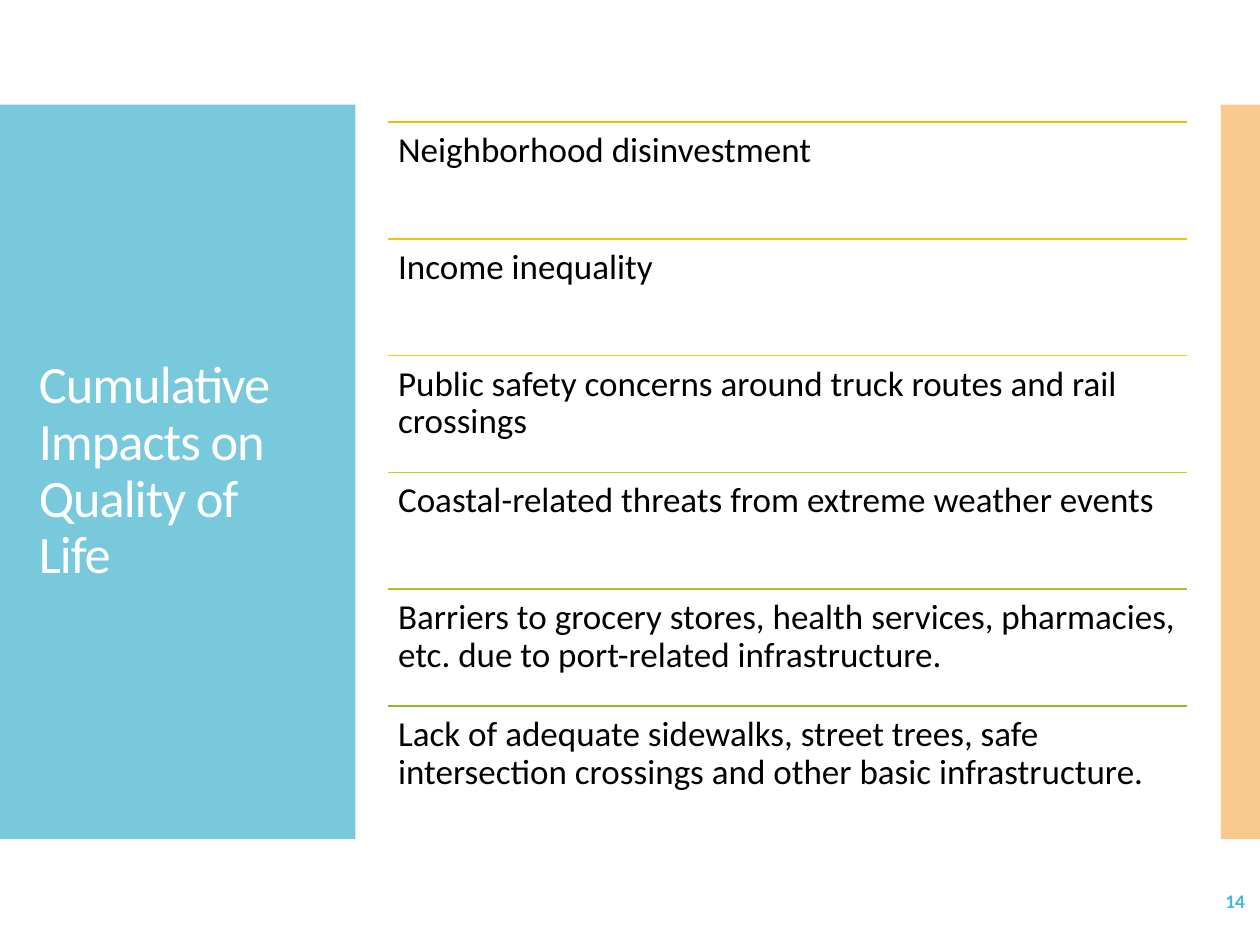
from dataclasses import dataclass

from lxml import etree
from pptx import Presentation
from pptx.dml.color import RGBColor
from pptx.enum.shapes import MSO_CONNECTOR, MSO_SHAPE
from pptx.enum.text import MSO_ANCHOR, PP_ALIGN
from pptx.oxml.ns import qn
from pptx.util import Inches, Pt

RECTANGLE = MSO_SHAPE.RECTANGLE
STRAIGHT = MSO_CONNECTOR.STRAIGHT
TOP, MIDDLE = MSO_ANCHOR.TOP, MSO_ANCHOR.MIDDLE
LEFT, RIGHT = PP_ALIGN.LEFT, PP_ALIGN.RIGHT


@dataclass(frozen=True)
class Theme:
    font: str = "Calibri"
    panel: str = "79C9DD"
    accent: str = "F79421"
    title: str = "FFFFFF"
    body: str = "000000"
    number: str = "40BAD2"
    title_size: float = 30
    body_size: float = 20
    number_size: float = 11
    rule_width: float = 0.85


THEME = Theme()

IMPACTS = [
    ("Neighborhood disinvestment", "FAB900"),
    ("Income inequality", "EDCA08"),
    ("Public safety concerns around truck routes and rail crossings", "E0D70F"),
    ("Coastal-related threats from extreme weather events", "C7D316"),
    ("Barriers to grocery stores, health services, pharmacies, etc. "
     "due to port-related infrastructure.", "A9C71D"),
    ("Lack of adequate sidewalks, street trees, safe intersection crossings "
     "and other basic infrastructure.", "90BB23"),
]
LIST_LEFT, LIST_TOP, LIST_WIDTH, LIST_HEIGHT = 3.08, 0.97, 6.34, 5.56


def add_band(shapes, left, width, color, opacity=100):
    band = shapes.add_shape(RECTANGLE, Inches(left), Inches(0.83),
                            Inches(width), Inches(5.83))
    band.shadow.inherit = False
    band.fill.solid()
    band.fill.fore_color.rgb = RGBColor.from_string(color)
    band.line.fill.background()
    if opacity < 100:
        fill_color = band.fill._xPr.find(qn("a:solidFill"))[0]
        etree.SubElement(fill_color, qn("a:alpha"), val=str(opacity * 1000))


def add_text(shapes, text, left, top, width, height, size, color,
             anchor=MIDDLE, align=LEFT, bold=False, line_spacing=1.0,
             inset=None, tracking=0):
    """Add a one-paragraph text box; tracking is in points."""
    box = shapes.add_textbox(Inches(left), Inches(top), Inches(width), Inches(height))
    frame = box.text_frame
    frame.word_wrap = True
    frame.vertical_anchor = anchor
    if inset is not None:
        frame.margin_left = frame.margin_right = Inches(inset)
        frame.margin_top = frame.margin_bottom = Inches(inset)
    frame.text = text
    para = frame.paragraphs[0]
    para.alignment = align
    para.line_spacing = line_spacing
    span = para.runs[0]
    span.font.name = THEME.font
    span.font.size = Pt(size)
    span.font.bold = bold
    span.font.color.rgb = RGBColor.from_string(color)
    if tracking:
        span._r.get_or_add_rPr().set("spc", str(round(tracking * 100)))


def add_rule(shapes, left, top, width, color):
    rule = shapes.add_connector(STRAIGHT, Inches(left), Inches(top),
                                Inches(left + width), Inches(top))
    rule.line.color.rgb = RGBColor.from_string(color)
    rule.line.width = Pt(THEME.rule_width)
    etree.SubElement(rule._element.spPr, qn("a:effectLst"))


def add_impact_list(shapes):
    """Stack the impacts in equal rows, each under its own rule."""
    rows = shapes.add_group_shape().shapes
    row_height = LIST_HEIGHT / len(IMPACTS)
    for index, (text, color) in enumerate(IMPACTS):
        top = LIST_TOP + index * row_height
        add_rule(rows, LIST_LEFT, top, LIST_WIDTH, color)
        add_text(rows, text, LIST_LEFT, top, LIST_WIDTH, row_height,
                 THEME.body_size, THEME.body, anchor=TOP,
                 line_spacing=0.9, inset=0.08)


def main():
    deck = Presentation()
    deck.slide_width, deck.slide_height = Inches(10), Inches(7.5)
    page = deck.slides.add_slide(deck.slide_layouts[6])
    shapes = page.shapes
    add_band(shapes, 0, 2.82, THEME.panel)
    add_band(shapes, 9.69, 0.31, THEME.accent, opacity=50)
    add_text(shapes, "Cumulative Impacts on Quality of Life", 0.21, 1.23, 2.42, 5.03,
             THEME.title_size, THEME.title, line_spacing=0.9, tracking=-0.6)
    add_text(shapes, "14", 8.72, 6.95, 1.26, 0.4, THEME.number_size, THEME.number,
             align=RIGHT, bold=True)
    add_impact_list(shapes)
    deck.save("out.pptx")


if __name__ == "__main__":
    main()
